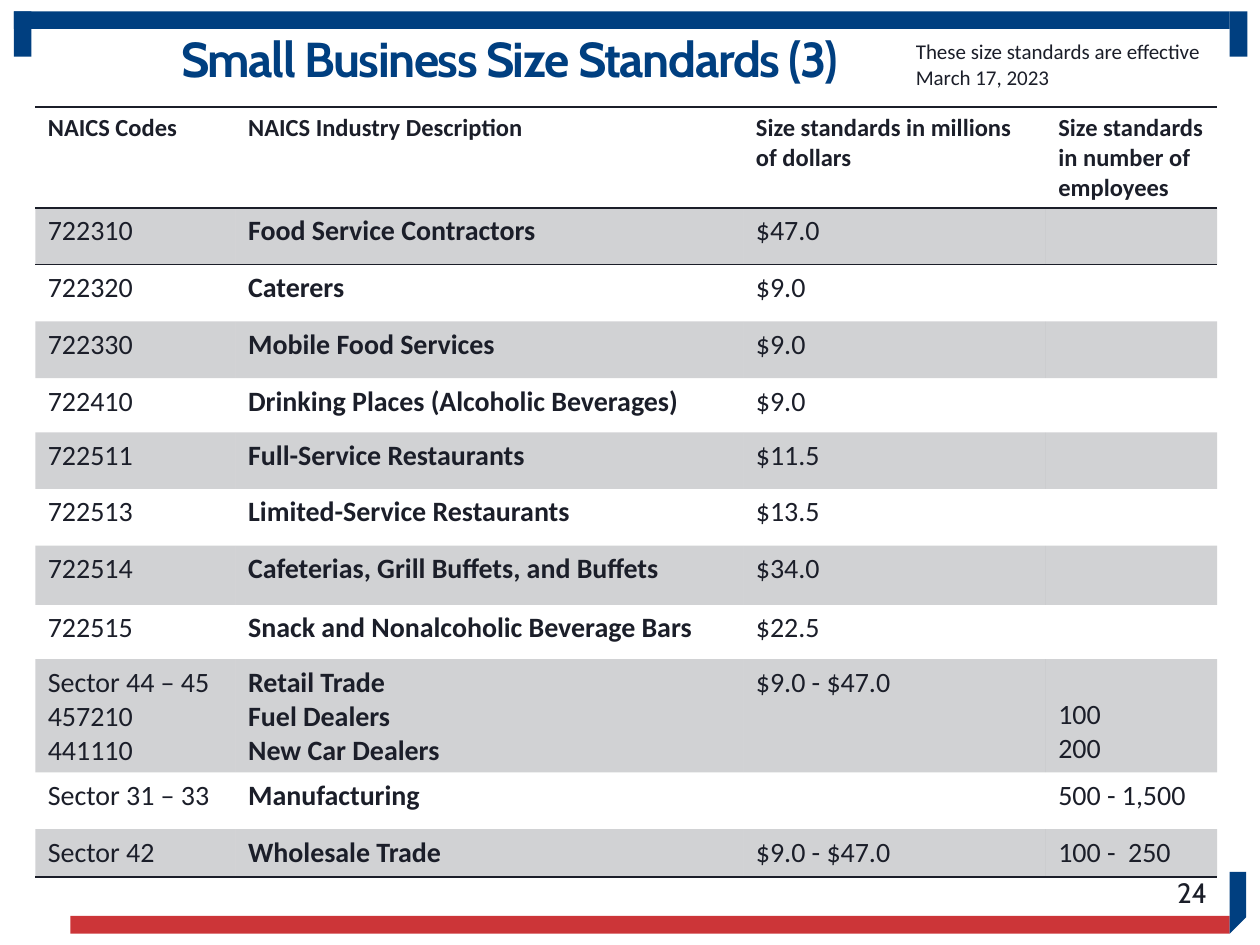
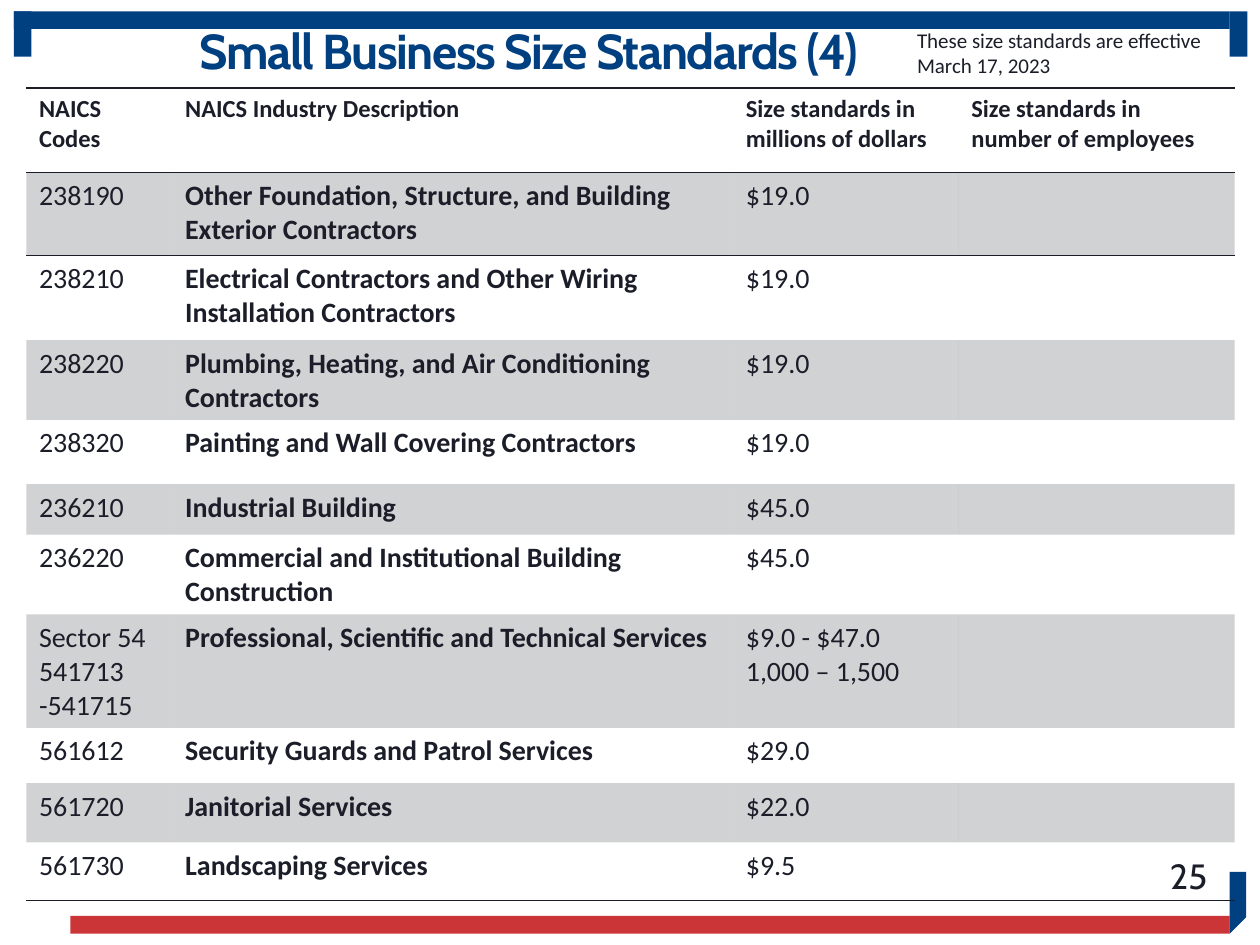
from dataclasses import dataclass
from typing import NamedTuple

from lxml.etree import SubElement
from pptx import Presentation
from pptx.dml.color import RGBColor
from pptx.enum.shapes import MSO_SHAPE as Preset
from pptx.enum.text import MSO_ANCHOR as Anchor, MSO_AUTO_SIZE as AutoSize, PP_ALIGN as Align
from pptx.oxml import parse_xml
from pptx.oxml.ns import nsdecls, qn
from pptx.util import Inches, Pt


@dataclass(frozen=True)
class Theme:
    navy: str = "003F80"
    red: str = "CC3538"
    ink: str = "1B1E29"
    band_alpha: int = 20
    heading_font: str = "Cabin"
    body_font: str = "Calibri"
    title_size: int = 28
    note_size: int = 12
    header_size: int = 14
    body_size: int = 16
    rule_width: int = 1


THEME = Theme()


class Box(NamedTuple):
    left: float
    top: float
    width: float
    height: float

    def lengths(self) -> list:
        return [Inches(value) for value in self]


class Bar(NamedTuple):
    box: Box
    color: str


class Row(NamedTuple):
    height: float
    code: str
    industry: str
    dollars: str = ""
    employees: str = ""


@dataclass(frozen=True)
class StandardsSlide:
    title: str
    title_box: Box
    note_box: Box
    table_left: float
    table_top: float
    columns: tuple[float, ...]
    header_height: float
    rows: tuple[Row, ...]
    number: str
    number_top: float
    number_size: int


# Frame shared by the slides
FRAME_BARS = (
    Bar(Box(0.11, 0.09, 9.65, 0.14), THEME.navy),
    Bar(Box(9.76, 0.09, 0.14, 0.36), THEME.navy),
    Bar(Box(0.11, 0.09, 0.14, 0.36), THEME.navy),
    Bar(Box(0.56, 7.27, 9.2, 0.14), THEME.red),
)
CORNER_POINTS = ((9.76, 6.92), (9.89, 6.92), (9.89, 7.28), (9.76, 7.41))
EFFECTIVE_NOTE = "These size standards are effective\nMarch 17, 2023"
HEADERS = (
    "NAICS Codes",
    "NAICS Industry Description",
    "Size standards in millions of dollars",
    "Size standards in number of employees",
)
INDUSTRY_COLUMN = 1
EMPLOYEES_COLUMN = 3
PLAIN_TABLE_STYLE = "{2D5ABB26-0587-4C30-8999-92F81FD0307C}"

SLIDES = (
    StandardsSlide(
        title="Small Business Size Standards (3)",
        title_box=Box(0.66, 0.24, 6.77, 0.5),
        note_box=Box(7.17, 0.26, 2.5, 0.5),
        table_left=0.28, table_top=0.85,
        columns=(1.59, 4.03, 2.4, 1.36), header_height=0.8,
        rows=(
            Row(0.45, "722310", "Food Service Contractors", "$47.0"),
            Row(0.45, "722320", "Caterers", "$9.0"),
            Row(0.45, "722330", "Mobile Food Services", "$9.0"),
            Row(0.43, "722410", "Drinking Places (Alcoholic Beverages)", "$9.0"),
            Row(0.45, "722511", "Full-Service Restaurants", "$11.5"),
            Row(0.45, "722513", "Limited-Service Restaurants", "$13.5"),
            Row(0.47, "722514", "Cafeterias, Grill Buffets, and Buffets", "$34.0"),
            Row(0.43, "722515", "Snack and Nonalcoholic Beverage Bars", "$22.5"),
            Row(0.9, "Sector 44 – 45\n457210\n441110",
                "Retail Trade\nFuel Dealers\nNew Car Dealers", "$9.0 - $47.0", "100\n200"),
            Row(0.45, "Sector 31 – 33", "Manufacturing", "", "500 - 1,500"),
            Row(0.38, "Sector 42", "Wholesale Trade", "$9.0 - $47.0", "100 -  250"),
        ),
        number="24", number_top=6.88, number_size=16,
    ),
    StandardsSlide(
        title="Small Business Size Standards (4)",
        title_box=Box(0.69, 0.17, 7.01, 0.51),
        note_box=Box(7.18, 0.17, 2.5, 0.5),
        table_left=0.21, table_top=0.7,
        columns=(1.16, 4.45, 1.79, 2.19), header_height=0.67,
        rows=(
            Row(0.66, "238190",
                "Other Foundation, Structure, and Building Exterior Contractors", "$19.0"),
            Row(0.67, "238210",
                "Electrical Contractors and Other Wiring Installation Contractors", "$19.0"),
            Row(0.63, "238220", "Plumbing, Heating, and Air Conditioning Contractors", "$19.0"),
            Row(0.51, "238320", "Painting and Wall Covering Contractors", "$19.0"),
            Row(0.4, "236210", "Industrial Building", "$45.0"),
            Row(0.63, "236220", "Commercial and Institutional Building Construction", "$45.0"),
            Row(0.9, "Sector 54\n541713 -541715",
                "Professional, Scientific and Technical Services", "$9.0 - $47.0\n1,000 – 1,500"),
            Row(0.44, "561612", "Security Guards and Patrol Services", "$29.0"),
            Row(0.47, "561720", "Janitorial Services", "$22.0"),
            Row(0.46, "561730", "Landscaping Services", "$9.5"),
        ),
        number="25", number_top=6.75, number_size=20,
    ),
)


def write(text_frame, text: str, size: int, font: str = THEME.body_font, color: str = THEME.ink,
          bold: bool = False, align: Align = Align.LEFT) -> None:
    text_frame.text = text
    text_frame.word_wrap = True
    for paragraph in text_frame.paragraphs:
        paragraph.alignment = align
        for run in paragraph.runs:
            run.font.name = font
            run.font.size = Pt(size)
            run.font.bold = bold
            run.font.color.rgb = RGBColor.from_string(color)


def paint(shape, color: str) -> None:
    shape.shadow.inherit = False
    shape.fill.solid()
    shape.fill.fore_color.rgb = RGBColor.from_string(color)
    shape.line.fill.background()


def draw_frame(slide) -> None:
    for bar in FRAME_BARS:
        paint(slide.shapes.add_shape(Preset.RECTANGLE, *bar.box.lengths()), bar.color)
    start, *others = [(Inches(x), Inches(y)) for x, y in CORNER_POINTS]
    builder = slide.shapes.build_freeform(*start)
    builder.add_line_segments(others, close=True)
    paint(builder.convert_to_shape(), THEME.navy)


def place_title(slide, text: str, box: Box) -> None:
    title = slide.shapes.title
    title.left, title.top, title.width, title.height = box.lengths()
    text_frame = title.text_frame
    write(text_frame, text, THEME.title_size, THEME.heading_font, THEME.navy, True, Align.CENTER)
    text_frame.auto_size = AutoSize.NONE
    text_frame.vertical_anchor = Anchor.MIDDLE
    paragraph = text_frame.paragraphs[0]
    paragraph.line_spacing = 0.9
    paragraph.runs[0].font._element.set("spc", "-80")


def add_text(slide, box: Box, text: str, size: int, **style):
    text_frame = slide.shapes.add_textbox(*box.lengths()).text_frame
    write(text_frame, text, size, **style)
    return text_frame


def rule_cell(cell, *sides: str) -> None:
    """Rule the given sides, named in schema order: lnT before lnB."""
    properties = cell._tc.get_or_add_tcPr()
    for position, side in enumerate(sides):
        properties.insert(position, parse_xml(
            f'<a:{side} {nsdecls("a")} w="{Pt(THEME.rule_width)}"><a:solidFill>'
            f'<a:srgbClr val="{THEME.ink}"/></a:solidFill></a:{side}>'))


def fill_cell(cell, banded: bool) -> None:
    if not banded:
        cell.fill.background()
        return
    cell.fill.solid()
    cell.fill.fore_color.rgb = RGBColor.from_string(THEME.ink)
    color = cell._tc.tcPr.find(f'{qn("a:solidFill")}/{qn("a:srgbClr")}')
    SubElement(color, qn("a:alpha")).set("val", str(THEME.band_alpha * 1000))


def add_standards_table(slide, content: StandardsSlide) -> None:
    heights = [content.header_height, *(row.height for row in content.rows)]
    box = Box(content.table_left, content.table_top, sum(content.columns), sum(heights))
    table = slide.shapes.add_table(len(heights), len(HEADERS), *box.lengths()).table
    table._tbl.tblPr.find(qn("a:tableStyleId")).text = PLAIN_TABLE_STYLE
    for column, width in zip(table.columns, content.columns):
        column.width = Inches(width)
    for row, height in zip(table.rows, heights):
        row.height = Inches(height)

    texts = [HEADERS, *(row[1:] for row in content.rows)]
    for row_index, row_texts in enumerate(texts):
        is_header = row_index == 0
        size = THEME.header_size if is_header else THEME.body_size
        for column_index, text in enumerate(row_texts):
            cell = table.cell(row_index, column_index)
            write(cell.text_frame, text, size, bold=is_header or column_index == INDUSTRY_COLUMN)
            if not text:
                ending = cell.text_frame.paragraphs[0]._p.get_or_add_endParaRPr()
                ending.set("sz", str(size * 100))
            # Two employee counts line up with the last lines of their row
            if column_index == EMPLOYEES_COLUMN and "\n" in text:
                cell.vertical_anchor = Anchor.BOTTOM
            fill_cell(cell, banded=row_index % 2 == 1)
            if is_header:
                rule_cell(cell, "lnT", "lnB")
            elif row_index == 1:
                rule_cell(cell, "lnT")
            elif row_index == len(texts) - 1:
                rule_cell(cell, "lnB")


def build_slide(presentation, content: StandardsSlide) -> None:
    slide = presentation.slides.add_slide(presentation.slide_layouts.get_by_name("Title Only"))
    draw_frame(slide)
    place_title(slide, content.title, content.title_box)
    add_text(slide, content.note_box, EFFECTIVE_NOTE, THEME.note_size)
    add_standards_table(slide, content)
    # Slide number
    number = add_text(slide, Box(7.43, content.number_top, 2.25, 0.4), content.number,
                      content.number_size, font=THEME.heading_font, align=Align.RIGHT)
    number.vertical_anchor = Anchor.MIDDLE


def main() -> None:
    presentation = Presentation()
    presentation.slide_width, presentation.slide_height = Inches(10), Inches(7.5)
    for content in SLIDES:
        build_slide(presentation, content)
    presentation.save("out.pptx")


if __name__ == "__main__":
    main()
